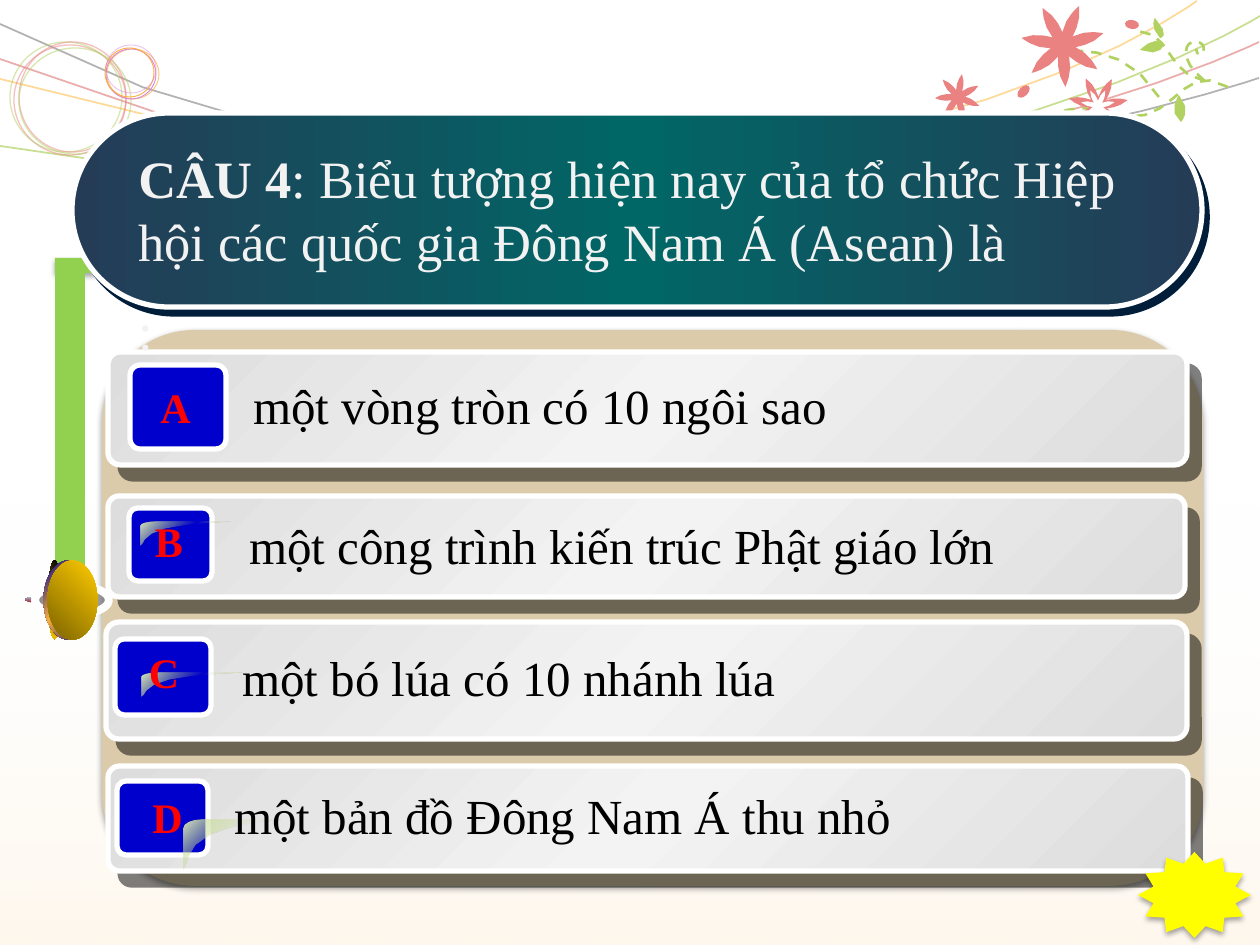
import math
import pptx
import pptx.dml.color
import pptx.enum.dml
import pptx.enum.shapes
import pptx.enum.text
import pptx.oxml
import pptx.oxml.ns
import pptx.util

SCALE = 914400 / 126
KIND = pptx.enum.shapes.MSO_SHAPE
NS = pptx.oxml.ns.nsdecls("a")
LEAF, PETAL, SAND = "B1D161", "EA8282", "F9AF41"


def px(length):
    return pptx.util.Emu(round(length * SCALE))


def rgb(color):
    return pptx.dml.color.RGBColor.from_string(color)


def color_xml(color, alpha=100):
    return f'<a:srgbClr val="{color}"><a:alpha val="{alpha * 1000}"/></a:srgbClr>'


def shadow_xml(color, alpha, blur, distance, angle):
    return pptx.oxml.parse_xml(
        f'<a:outerShdw {NS} blurRad="{round(blur * 12700)}" dist="{round(distance * 12700)}" '
        f'dir="{angle * 60000}" algn="ctr" rotWithShape="0">{color_xml(color, alpha)}</a:outerShdw>')


def gradient_xml(stops, angle, corner):
    """Stops are (position, color[, alpha]); corner is the left, top, right, bottom focus."""
    stop_list = "".join(f'<a:gs pos="{s[0] * 1000}">{color_xml(*s[1:])}</a:gs>' for s in stops)
    if corner:
        sides = " ".join(f'{side}="{v * 1000}"' for side, v in zip("ltrb", corner))
        course = f'<a:path path="rect"><a:fillToRect {sides}/></a:path>'
    else:
        course = f'<a:lin ang="{angle * 60000}" scaled="1"/>'
    return pptx.oxml.parse_xml(
        f'<a:gradFill {NS} rotWithShape="1"><a:gsLst>{stop_list}</a:gsLst>{course}</a:gradFill>')


def bezier(points, steps):
    """Sample a chain of cubic curves: a start, then two controls and an end per piece."""
    sampled = [points[0]]
    for i in range(0, len(points) - 1, 3):
        a, b, c, d = points[i:i + 4]
        for t in (n / steps for n in range(1, steps + 1)):
            u = 1 - t
            sampled.append(tuple(u**3 * a[k] + 3 * u * u * t * b[k] + 3 * u * t * t * c[k] + t**3 * d[k]
                                 for k in (0, 1)))
    return sampled


def flower(x, y, radius, start, petals=7):
    def polar(degrees, share):
        a = math.radians(degrees)
        return x + radius * share * math.cos(a), y + radius * share * math.sin(a)
    half = 180 / petals
    points = [polar(start - half, 0.3)]
    for i in range(petals):
        tip = start + 2 * half * i
        notch = polar(tip + half, 0.3)
        points += [polar(tip - 17, 0.7), polar(tip, 1), polar(tip, 1),
                   polar(tip + 17, 0.7), notch, notch]
    return points


class Page:
    font = "Times New Roman"

    def __init__(self, slide):
        self.slide = slide

    def style(self, shape, fill=None, angle=0, corner=None, line=None, width=1, line_alpha=100,
              dashed=False, shadow=None):
        properties = shape._element.spPr
        if isinstance(fill, str):
            shape.fill.solid()
            shape.fill.fore_color.rgb = rgb(fill)
        elif fill:
            shape.fill.gradient()
            old = properties.find(pptx.oxml.ns.qn("a:gradFill"))
            properties.replace(old, gradient_xml(fill, angle, corner))
        else:
            shape.fill.background()
        if line:
            shape.line.color.rgb = rgb(line)
            shape.line.width = pptx.util.Pt(width)
            stroke = properties.xpath("./a:ln//a:srgbClr")[0]
            stroke.append(pptx.oxml.parse_xml(f'<a:alpha {NS} val="{line_alpha * 1000}"/>'))
            if dashed:
                shape.line.dash_style = pptx.enum.dml.MSO_LINE.DASH
        else:
            shape.line.fill.background()
        shape.shadow.inherit = False
        if shadow:
            properties.find(pptx.oxml.ns.qn("a:effectLst")).append(shadow_xml(*shadow))
        return shape

    def shape(self, kind, box, turn=0, adjust=(), **look):
        shape = self.slide.shapes.add_shape(kind, *map(px, box))
        shape.rotation = turn
        for i, value in enumerate(adjust):
            shape.adjustments[i] = value
        return self.style(shape, **look)

    def curves(self, outlines, steps=4, close=False, **look):
        builder = None
        for outline in outlines:
            start, *rest = [(px(x), px(y)) for x, y in bezier(outline, steps)]
            if builder:
                builder.move_to(*start)
            else:
                builder = self.slide.shapes.build_freeform(*start, scale=1.0)
            builder.add_line_segments(rest, close=close)
        return self.style(builder.convert_to_shape(), **look)

    def text(self, box, text, size=28, color="000000", bold=False, lead="", align="LEFT",
             before=0, shadow=None):
        frame = self.slide.shapes.add_textbox(*map(px, box)).text_frame
        frame.word_wrap = True
        frame.auto_size = pptx.enum.text.MSO_AUTO_SIZE.SHAPE_TO_FIT_TEXT
        for i, words in enumerate(text.split("\n")):
            paragraph = frame.add_paragraph() if i else frame.paragraphs[0]
            paragraph.alignment = getattr(pptx.enum.text.PP_ALIGN, align)
            paragraph.space_before = pptx.util.Pt(before)
            for part, strong in ((lead if i == 0 else "", True), (words, bold)):
                if not part:
                    continue
                run = paragraph.add_run()
                run.text = part
                run.font.name, run.font.size, run.font.bold = self.font, pptx.util.Pt(size), strong
                run.font.color.rgb = rgb(color)
                if shadow:
                    effects = pptx.oxml.parse_xml(f"<a:effectLst {NS}/>")
                    effects.append(shadow_xml(*shadow))
                    run._r.rPr.find(pptx.oxml.ns.qn("a:solidFill")).addnext(effects)


def draw_backdrop(page):
    # Soft washes
    wash = page.shape(KIND.RECTANGLE, (0, 0, 1018, 420), corner=(100, 0, 0, 100),
                      fill=[(0, LEAF, 20), (100, "FFFFFF", 0)])
    wash._element.spPr.xfrm.set("flipH", "1")
    page.shape(KIND.RECTANGLE, (0, 483, 1260, 462), fill=[(0, "FFFFFF", 0), (100, SAND, 10)], angle=90)
    # Long strands
    for y, control, end, color, alpha in (
            (24, (562, 320), (1259, 78), "B2B2B2", 100), (59, (672, 331), (1259, 42), "D85A5A", 50),
            (79, (788, 307), (1197, 1), "FEA300", 40), (146, (823, 295), (1260, 16), LEAF, 70)):
        page.curves([[(0, y), control, end, end]], steps=12, line=color, line_alpha=alpha)
    # Rings
    for box, color, width, alpha in (
            ((14, 45, 112, 110), PETAL, 0.75, 50), ((10, 42, 112, 110), LEAF, 0.75, 50),
            ((19, 42, 107, 110), PETAL, 0.75, 50), ((19, 48, 112, 106), LEAF, 0.75, 50),
            ((107, 49, 52, 50), SAND, 0.5, 70), ((106, 49, 50, 50), "DB85DB", 0.5, 100),
            ((105, 48, 49, 49), SAND, 0.5, 100), ((106, 45, 50, 48), "DB85DB", 0.5, 50)):
        page.shape(KIND.OVAL, box, line=color, width=width, line_alpha=alpha)
    # Vines, leaves, buds and flowers
    vines = (
        [(1228, 87), (1188, 64), (1179, 106), (1145, 115), (1111, 122), (1100, 102), (1067, 110),
         (1036, 117), (1032, 137), (1011, 139)],
        [(1205, 81), (1183, 64), (1184, 49), (1189, 44), (1196, 39), (1201, 43), (1203, 45),
         (1205, 49), (1203, 55), (1200, 55), (1197, 54), (1196, 50), (1197, 49)],
        [(1205, 81), (1165, 73), (1173, 33), (1138, 31)],
        [(1159, 97), (1125, 39), (1061, 52), (1061, 52)])
    page.curves(vines, steps=6, line=LEAF, width=1.5, dashed=True)
    leaves = (((1160, 38), (1149, 26), (1155, 18), (1172, 37)),
              ((1164, 44), (1155, 34), (1140, 50), (1162, 58)),
              ((1179, 95), (1193, 111), (1181, 122), (1167, 112)))
    page.curves([[base, swell, tip, tip, back, base, base] for base, swell, tip, back in leaves],
                close=True, fill=LEAF)
    page.shape(KIND.OVAL, (1016, 87, 15, 9), turn=133.8, fill=PETAL)
    page.shape(KIND.OVAL, (1125, 20, 14, 9), turn=8.7, fill=PETAL)
    page.curves([flower(958, 97, 23, 23), flower(1098, 106, 30, -11), flower(1063, 45, 42, -16)],
                close=True, fill=PETAL)
    page.curves([flower(1098, 106, 17, -13)], steps=3, close=True, fill="FFFFFF")


def draw_handle(page, soft):
    page.shape(KIND.RECTANGLE, (55, 258, 217, 15), fill="92D050", shadow=soft)
    page.shape(KIND.RECTANGLE, (55, 259, 30, 321), fill="92D050")
    for box, turn, end in (((63, 581, 14, 4), 0, "E0CED0"), ((66, 615, 14, 4), 180, "A7B8CC"),
                           ((26, 595, 6, 9), 270, "A7B8CC")):
        page.shape(KIND.UP_ARROW, box, turn=turn, adjust=(0.52, 1), fill=[(0, "A22E3F"), (100, end)])
    for box, colors, angle, edge in (
            ((57, 563, 30, 74), ("767676", "FFFFFF", "767676"), 90, "FFFFFF"),
            ((15, 593, 79, 13), ("000000", "FFCC00"), 45, None),
            ((29, 575, 79, 50), ("00008A", SAND, "00008A"), 315, None),
            ((33, 575, 79, 50), ("FFCC00", "7C6300"), 45, None)):
        stops = [(100 * i // (len(colors) - 1), color) for i, color in enumerate(colors)]
        page.shape(KIND.OVAL, box, turn=90, fill=stops, angle=angle, line=edge, width=4.5)


def draw_answer(page, letter, answer, bar, badge, gleam, letter_box, answer_box):
    page.shape(KIND.ROUNDED_RECTANGLE, bar, adjust=[0.11], angle=45, line="FFFFFF", width=3,
               fill=[(0, "DDDDDD"), (50, "F3F3F3"), (100, "DDDDDD")], shadow=("000000", 50, 0, 10.6, 49))
    page.shape(KIND.ROUNDED_RECTANGLE, badge, adjust=[0.12], fill="0000CC", line="FFFFFF", width=3)
    if gleam:
        x, y, w, h = gleam
        outline = ((0.19, 0), (0.08, 0), (0, 0.08), (0, 0.18), (0, 0.18), (0, 1), (0, 1), (0.04, 1),
                   (0.01, 0.54), (0.27, 0.3), (0.51, 0.06), (1, 0.03), (0.98, 0))
        page.curves([[(x + w * u, y + h * v) for u, v in outline]], close=True, angle=45,
                    fill=[(0, "D9E7BF"), (50, LEAF, 0), (100, "D9E7BF")])
    page.text(letter_box, letter, size=24, color="FF0000", bold=True, align="CENTER",
              shadow=("000000", 100, 0, 2, 45))
    page.text(answer_box, answer)


def main():
    deck = pptx.Presentation()
    deck.slide_width, deck.slide_height = px(1260), px(945)
    page = Page(deck.slides.add_slide(deck.slide_layouts[6]))
    soft = ("000000", 35, 3.1, 1.8, 90)
    draw_backdrop(page)
    page.shape(KIND.ROUNDED_RECTANGLE, (102, 330, 1101, 556), fill="DCCBAA", shadow=soft)
    draw_handle(page, soft)
    # Question panel
    page.shape(KIND.ROUNDED_RECTANGLE, (72, 113, 1130, 194), adjust=[0.5], line="FFFFFF", width=3,
               fill=[(0, "253C57"), (50, "006666"), (100, "253C57")], shadow=("001D3A", 100, 0, 5, 53))
    # Answers: bar, badge, gleam, letter and wording
    for row in (
            ("A", "một vòng tròn có 10 ngôi sao", (108, 352, 1079, 113), (130, 365, 96, 84), None,
             (141, 375, 69, 63), (241, 369, 961, 72)),
            ("B", "một công trình kiến trúc Phật giáo lớn", (108, 496, 1077, 101), (129, 508, 83, 73),
             (141, 522, 91, 24), (137, 509, 64, 63), (237, 509, 966, 72)),
            ("C", "một bó lúa có 10 nhánh lúa", (106, 622, 1081, 117), (115, 639, 96, 76),
             (142, 673, 103, 24), (127, 640, 74, 63), (230, 641, 956, 72)),
            ("D", "một bản đồ Đông Nam Á thu nhỏ", (108, 766, 1080, 105), (117, 781, 91, 74),
             (184, 820, 100, 50), (132, 785, 71, 63), (222, 779, 980, 72))):
        draw_answer(page, *row)
    # Question wording and star
    page.text((126, 140, 1061, 236), ": Biểu tượng hiện nay của tổ chức Hiệp hội các quốc gia Đông Nam Á "
              "(Asean) là\n:", size=30, color="F2F2F2", lead="CÂU 4", before=15)
    page.shape(KIND.STAR_12_POINT, (1138, 852, 113, 86), fill="FFFF00", shadow=soft)
    deck.save("out.pptx")


if __name__ == "__main__":
    main()
